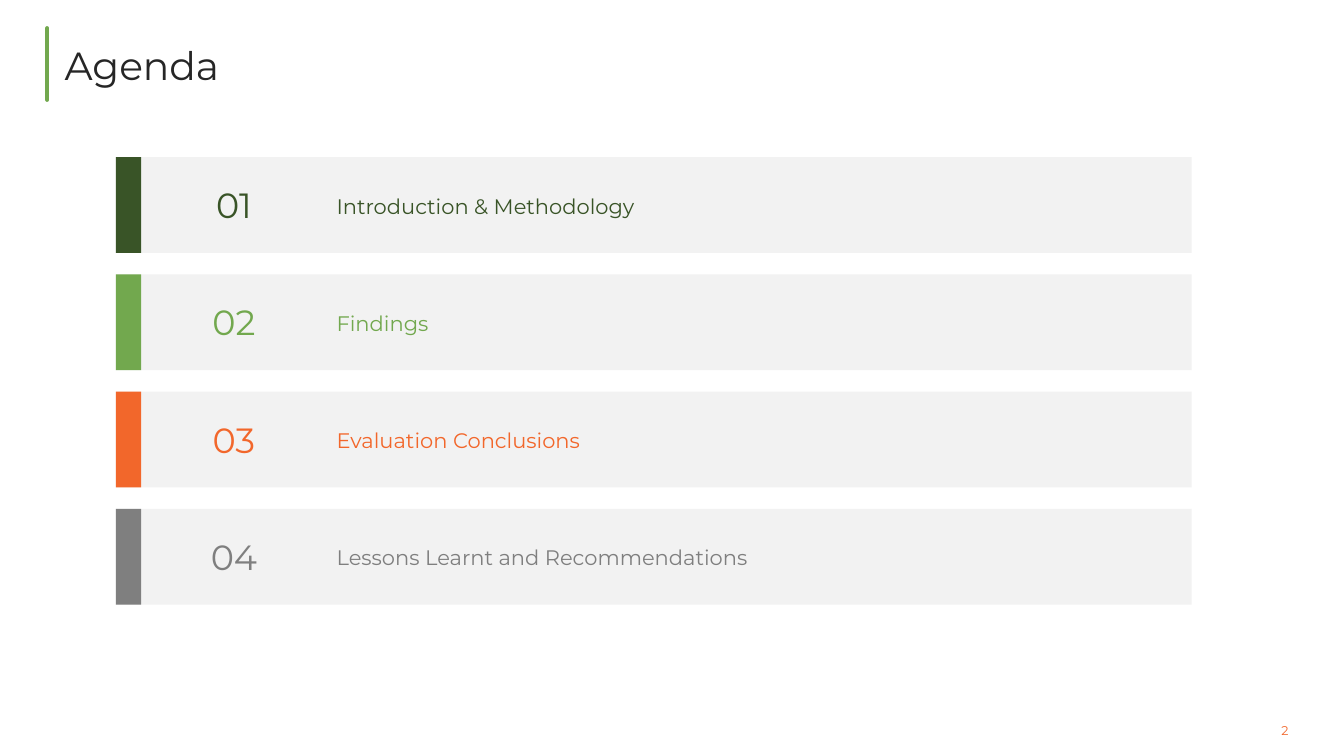
"""Build the agenda slide with four numbered, colour-coded sections."""
import pptx
import pptx.dml.color
import pptx.enum.shapes
import pptx.enum.text
import pptx.oxml.ns
import pptx.util
from lxml import etree
from pptx.util import Inches

COLORS = {
    "dark_green": "395427",
    "green": "72A84E",
    "orange": "F2672B",
    "gray": "7F7F7F",
    "band": "F2F2F2",
    "title": "262626",
}
ALIGN = pptx.enum.text.PP_ALIGN
ANCHOR = pptx.enum.text.MSO_ANCHOR


def write_text(shape, text, size, color, margins, align=ALIGN.LEFT, anchor=ANCHOR.MIDDLE):
    frame = shape.text_frame
    frame.word_wrap = True
    frame.auto_size = pptx.enum.text.MSO_AUTO_SIZE.NONE
    frame.vertical_anchor = anchor
    left, top, right, bottom = margins
    frame.margin_left, frame.margin_top = Inches(left), Inches(top)
    frame.margin_right, frame.margin_bottom = Inches(right), Inches(bottom)
    frame.text = text
    paragraph = frame.paragraphs[0]
    paragraph.alignment = align
    paragraph.font.name = "Montserrat"
    paragraph.font.size = pptx.util.Pt(size)
    paragraph.font.bold = False
    paragraph.font.color.rgb = pptx.dml.color.RGBColor.from_string(COLORS[color])


def add_block(slide, left, top, width, height, color):
    block = slide.shapes.add_shape(
        pptx.enum.shapes.MSO_SHAPE.RECTANGLE,
        Inches(left), Inches(top), Inches(width), Inches(height))
    block.shadow.inherit = False
    block.fill.solid()
    block.fill.fore_color.rgb = pptx.dml.color.RGBColor.from_string(COLORS[color])
    block.line.fill.background()


presentation = pptx.Presentation()
presentation.slide_width = Inches(13.33)
presentation.slide_height = Inches(7.5)
slide = presentation.slides.add_slide(presentation.slide_layouts[5])

title = slide.shapes.title
title.left, title.top = Inches(0.49), Inches(0.29)
title.width, title.height = Inches(12.36), Inches(0.7)
write_text(title, "Agenda", 28, "title", (0.15, 0.02, 0.05, 0.02))

title_bar = slide.shapes.add_connector(
    pptx.enum.shapes.MSO_CONNECTOR.STRAIGHT,
    Inches(0.47), Inches(0.28), Inches(0.47), Inches(0.99))
title_bar.line.color.rgb = pptx.dml.color.RGBColor.from_string(COLORS["green"])
title_bar.line.width = pptx.util.Pt(3)
title_bar.line._get_or_add_ln().set("cap", "rnd")
etree.SubElement(title_bar._element.spPr, pptx.oxml.ns.qn("a:effectLst"))

page_number = slide.shapes.add_textbox(
    Inches(12.71), Inches(7.17), Inches(0.72), Inches(0.15))
write_text(page_number, "2", 9, "orange", (0, 0, 0, 0), anchor=ANCHOR.BOTTOM)

SECTIONS = [
    ("Introduction & Methodology", "dark_green"),
    ("Findings", "green"),
    ("Evaluation Conclusions", "orange"),
    ("Lessons Learnt and Recommendations", "gray"),
]
FIRST_TOP, ROW_STEP, ROW_HEIGHT = 1.56, 1.163, 0.95
TEXT_MARGINS = (0.1, 0.05, 0.1, 0.05)

for index, (heading, color) in enumerate(SECTIONS):
    top = FIRST_TOP + index * ROW_STEP
    add_block(slide, 1.15, top, 10.67, ROW_HEIGHT, "band")
    add_block(slide, 1.15, top, 0.25, ROW_HEIGHT, color)

    number_box = slide.shapes.add_textbox(
        Inches(1.4), Inches(top + 0.23), Inches(1.84), Inches(0.48))
    write_text(number_box, f"{index + 1:02}", 25, color, TEXT_MARGINS, ALIGN.CENTER)

    heading_box = slide.shapes.add_textbox(
        Inches(3.24), Inches(top + 0.34), Inches(8.24), Inches(0.28))
    write_text(heading_box, heading, 15, color, TEXT_MARGINS)

presentation.save("out.pptx")
